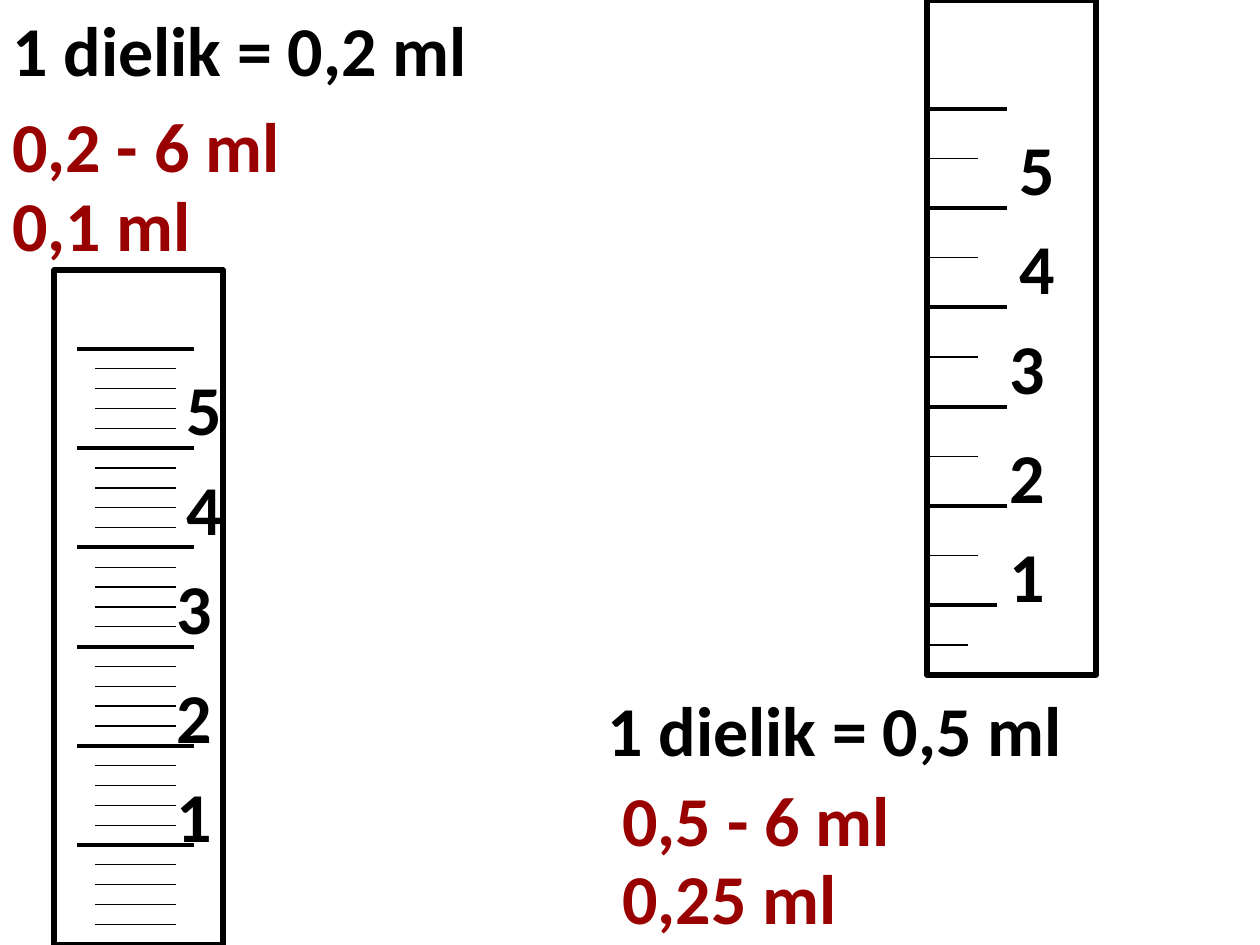
import pptx
import pptx.util
import pptx.dml.color
import pptx.enum.shapes
import pptx.enum.text
import pptx.oxml.ns
import lxml.etree

# Content: every length is in px, 126 to the inch
SLIDE = (1260, 945)
CYLINDER = (169, 675)
LABEL = (149, 97)

# Ticks run at even gaps from the top mark down to the last long mark
FINE = {
    "corner": (54, 270), "first": 349, "last": 845,
    "parts": 5, "count": 30,
    "long": (77, 194), "short": (95, 176),
    "extra": [],
    "labels": [("1", 164, 766), ("2", 164, 667), ("3", 164, 558),
               ("4", 174, 459), ("5", 174, 359)],
}
COARSE = {
    "corner": (927, 0), "first": 109, "last": 605,
    "parts": 2, "count": 10,
    "long": (927, 1007), "short": (927, 978),
    "extra": [(927, 997, 605, "long"), (927, 968, 645, "short")],
    "labels": [("1", 997, 526), ("2", 997, 427), ("3", 997, 318),
               ("4", 1007, 218), ("5", 1007, 119)],
}
LONG_GAPS = 5

NOTES = [
    ("1 dielik = 0,2 ml", 0, 0, 665, "ink"),
    ("0,2 - 6 ml", 0, 96, 605, "answer"),
    ("0,1 ml", 0, 175, 605, "answer"),
    ("1 dielik = 0,5 ml", 595, 680, 665, "ink"),
    ("0,5 - 6 ml", 610, 770, 605, "answer"),
    ("0,25 ml", 610, 848, 605, "answer"),
]

THEME = {
    "font": "Calibri", "size": 40,
    "ink": "000000", "answer": "990000",
    "outline": 3, "long": 2.25, "short": 0.75,
}


def px(length):
    return pptx.util.Emu(round(length * 914400 / 126))


def color(name):
    return pptx.dml.color.RGBColor.from_string(THEME[name])


def stroke(line, weight):
    line.color.rgb = color("ink")
    line.width = pptx.util.Pt(THEME[weight])


def add_outline(shapes, corner):
    outline = shapes.add_shape(pptx.enum.shapes.MSO_SHAPE.RECTANGLE,
                               *map(px, corner + CYLINDER))
    outline.shadow.inherit = False
    outline.fill.background()
    stroke(outline.line, "outline")


def add_tick(shapes, left, right, y, weight):
    tick = shapes.add_connector(pptx.enum.shapes.MSO_CONNECTOR.STRAIGHT,
                                px(left), px(y), px(right), px(y))
    stroke(tick.line, weight)
    lxml.etree.SubElement(tick._element.spPr,
                          pptx.oxml.ns.qn("a:effectLst"))


def add_text(shapes, words, left, top, width, ink):
    frame = shapes.add_textbox(*map(px, (left, top, width, LABEL[1]))).text_frame
    frame.word_wrap = True
    frame.auto_size = pptx.enum.text.MSO_AUTO_SIZE.SHAPE_TO_FIT_TEXT
    frame.text = words
    font = frame.paragraphs[0].runs[0].font
    font.name, font.bold = THEME["font"], True
    font.size = pptx.util.Pt(THEME["size"])
    font.color.rgb = color(ink)


def add_cylinder(slide, cylinder):
    scale = slide.shapes.add_group_shape().shapes
    add_outline(scale, cylinder["corner"])
    gap = (cylinder["last"] - cylinder["first"]) / (LONG_GAPS * cylinder["parts"])
    for i in range(cylinder["count"]):
        weight = "short" if i % cylinder["parts"] else "long"
        add_tick(scale, *cylinder[weight], cylinder["first"] + i * gap, weight)
    for tick in cylinder["extra"]:
        add_tick(scale, *tick)
    for number, left, top in cylinder["labels"]:
        add_text(slide.shapes, number, left, top, LABEL[0], "ink")


def main():
    deck = pptx.Presentation()
    deck.slide_width, deck.slide_height = map(px, SLIDE)
    slide = deck.slides.add_slide(deck.slide_layouts[6])

    # Measuring cylinders
    for cylinder in (FINE, COARSE):
        add_cylinder(slide, cylinder)

    # Division sizes, ranges and accuracies
    for note in NOTES:
        add_text(slide.shapes, *note)

    deck.save("out.pptx")


if __name__ == "__main__":
    main()
